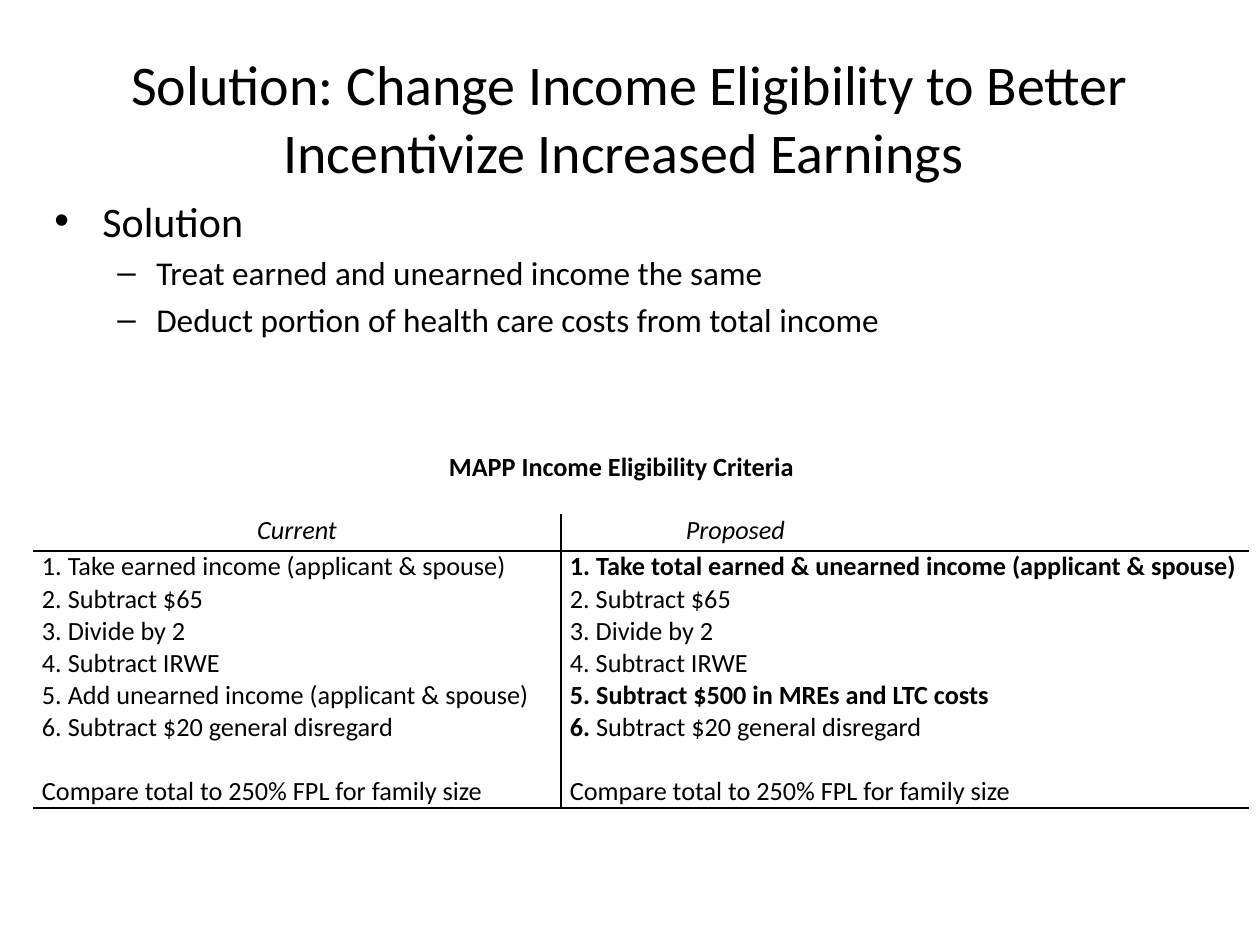
from lxml.etree import SubElement
from pptx import Presentation
from pptx.dml.color import RGBColor
from pptx.enum.text import MSO_ANCHOR, PP_ALIGN
from pptx.oxml.ns import qn
from pptx.util import Emu, Pt

PIXELS_PER_INCH = 126
BLACK = RGBColor(0, 0, 0)
FONT = "Calibri"
TABLE_SIZE = 15
LINE_GAP = 18.3
COLUMN_WIDTHS = (33, 528, 349, 339)
ROW_HEIGHTS = (63, 37, 257)
BORDER_TAGS = {"left": "a:lnL", "right": "a:lnR", "top": "a:lnT", "bottom": "a:lnB"}

TITLE = "Solution: Change Income Eligibility to Better Incentivize Increased Earnings "
BULLETS = (
    ("Solution", 0),
    ("Treat earned and unearned income the same", 1),
    ("Deduct portion of health care costs from total income", 1),
)
BULLET_STYLES = (
    {"mark": "•", "indent": 48, "hanging": 48, "size": 24, "before": 4.8},
    {"mark": "–", "indent": 102, "hanging": 39, "size": 19, "before": 3.8},
)
SHARED_STEPS = ("2. Subtract $65", "3. Divide by 2", "4. Subtract IRWE")
DISREGARD = "Subtract $20 general disregard"
COMPARISON = "Compare total to 250% FPL for family size"
CURRENT_STEPS = (
    "1. Take earned income (applicant & spouse)",
    *SHARED_STEPS,
    "5. Add unearned income (applicant & spouse)",
    "6. " + DISREGARD,
)
PROPOSED_STEPS = (
    (("1. Take total earned & unearned income (applicant & spouse)", True),),
    *(((step, False),) for step in SHARED_STEPS),
    (("5. Subtract $500 in MREs and LTC costs", True),),
    (("6. ", True), (DISREGARD, False)),
)


def px(value):
    return Emu(round(value * 914400 / PIXELS_PER_INCH))


def add_text(paragraph, text, size=TABLE_SIZE, bold=False, italic=False,
             align=PP_ALIGN.LEFT, before=0):
    paragraph.alignment = align
    paragraph.space_before = Pt(before)
    run = paragraph.add_run()
    run.text = text
    run.font.name = FONT
    run.font.size = Pt(size)
    run.font.bold = bold
    run.font.italic = italic
    run.font.color.rgb = BLACK


def next_paragraph(frame, index):
    return frame.add_paragraph() if index else frame.paragraphs[0]


def add_text_frame(slide, left, top, width, height, anchor=MSO_ANCHOR.TOP):
    box = slide.shapes.add_textbox(px(left), px(top), px(width), px(height))
    frame = box.text_frame
    frame.word_wrap = True
    frame.vertical_anchor = anchor
    return frame


def set_bullet(paragraph, mark, indent, hanging):
    properties = paragraph._p.get_or_add_pPr()
    properties.set("marL", str(px(indent)))
    properties.set("indent", str(px(-hanging)))
    SubElement(properties, qn("a:buFont"), typeface="Arial")
    SubElement(properties, qn("a:buChar"), char=mark)


def add_bullets(slide):
    frame = add_text_frame(slide, 42, 189, 1134, 273)
    for index, (text, level) in enumerate(BULLETS):
        style = BULLET_STYLES[level]
        paragraph = next_paragraph(frame, index)
        paragraph.level = level
        add_text(paragraph, text, size=style["size"], before=style["before"])
        set_bullet(paragraph, style["mark"], style["indent"], style["hanging"])


def set_borders(cell, sides):
    properties = cell._tc.get_or_add_tcPr()
    for side, tag in BORDER_TAGS.items():
        visible = side in sides
        line = SubElement(properties, qn(tag), w=str(Pt(1) if visible else 0))
        if visible:
            fill = SubElement(line, qn("a:solidFill"))
            SubElement(fill, qn("a:srgbClr"), val=str(BLACK))
        else:
            SubElement(line, qn("a:noFill"))


def format_cell(cell, sides):
    set_borders(cell, sides)
    cell.fill.background()
    cell.margin_left = cell.margin_right = px(9)
    cell.margin_top = cell.margin_bottom = 0
    SubElement(cell.text_frame.paragraphs[0]._p, qn("a:endParaRPr"), sz=str(TABLE_SIZE * 100))


def cell_sides(row, column):
    sides = set()
    if row and column:
        sides.add("bottom")
        if row == 2:
            sides.add("top")
        if column == 1:
            sides.add("right")
        if column == 2:
            sides.add("left")
    return sides


def fill_steps(cell, steps):
    frame = cell.text_frame
    for index, runs in enumerate(steps):
        paragraph = next_paragraph(frame, index)
        for text, bold in runs:
            add_text(paragraph, text, bold=bold)
    add_text(frame.add_paragraph(), COMPARISON, before=LINE_GAP)


def add_criteria_table(slide):
    table = slide.shapes.add_table(
        len(ROW_HEIGHTS), len(COLUMN_WIDTHS), 0, px(451),
        px(sum(COLUMN_WIDTHS)), px(sum(ROW_HEIGHTS))).table
    table.first_row = False
    table.horz_banding = False
    for column, width in zip(table.columns, COLUMN_WIDTHS):
        column.width = px(width)
    for row, height in zip(table.rows, ROW_HEIGHTS):
        row.height = px(height)
    for row in range(len(ROW_HEIGHTS)):
        for column in range(len(COLUMN_WIDTHS)):
            format_cell(table.cell(row, column), cell_sides(row, column))
    table.cell(0, 0).merge(table.cell(0, 3))
    table.cell(2, 2).merge(table.cell(2, 3))
    add_text(table.cell(0, 0).text_frame.paragraphs[0],
             "MAPP Income Eligibility Criteria ", bold=True, align=PP_ALIGN.CENTER)
    for column, heading in enumerate(("Current", "Proposed"), start=1):
        add_text(table.cell(1, column).text_frame.paragraphs[0], heading,
                 italic=True, align=PP_ALIGN.CENTER)
    fill_steps(table.cell(2, 1), [((step, False),) for step in CURRENT_STEPS])
    fill_steps(table.cell(2, 2), PROPOSED_STEPS)
    table.cell(2, 2).vertical_anchor = MSO_ANCHOR.MIDDLE


def main():
    presentation = Presentation()
    presentation.slide_width = px(1260)
    presentation.slide_height = px(945)
    slide = presentation.slides.add_slide(presentation.slide_layouts[6])
    title = add_text_frame(slide, 63, 38, 1134, 158, anchor=MSO_ANCHOR.MIDDLE)
    add_text(title.paragraphs[0], TITLE, size=32, align=PP_ALIGN.CENTER)
    add_bullets(slide)
    add_criteria_table(slide)
    presentation.save("out.pptx")


if __name__ == "__main__":
    main()
